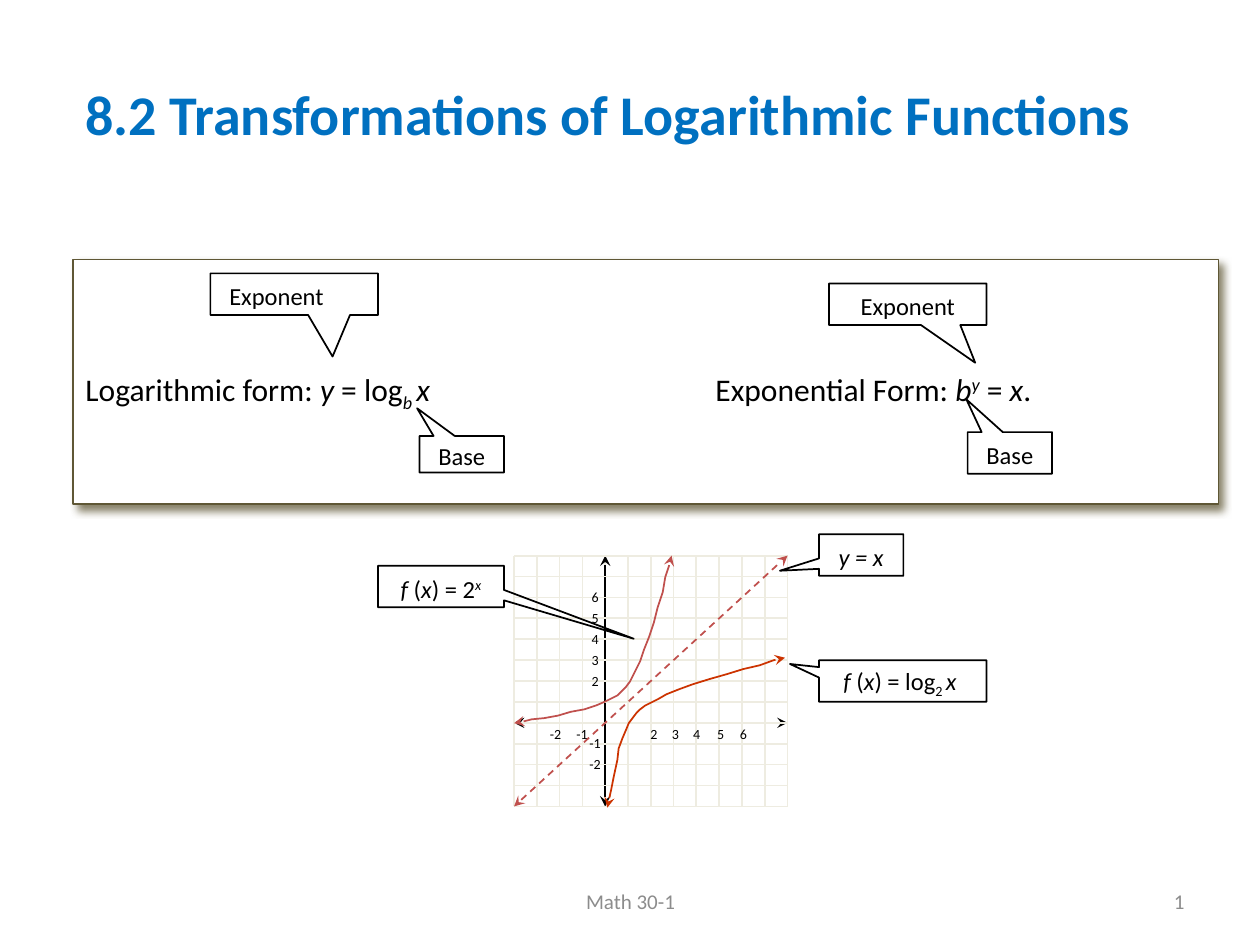
from lxml.etree import SubElement
from pptx import Presentation
from pptx.dml.color import RGBColor
from pptx.enum.dml import MSO_LINE_DASH_STYLE as Dash
from pptx.enum.shapes import MSO_CONNECTOR as Connector, MSO_SHAPE as Shape
from pptx.enum.text import MSO_ANCHOR as Anchor, PP_ALIGN as Align
from pptx.oxml.ns import qn
from pptx.util import Inches, Pt

BLACK = RGBColor(0x00, 0x00, 0x00)
WHITE = RGBColor(0xFF, 0xFF, 0xFF)
BLUE = RGBColor(0x00, 0x70, 0xC0)
GRAY = RGBColor(0x8C, 0x8C, 0x8C)
OLIVE = RGBColor(0x5F, 0x57, 0x35)
GRID = RGBColor(0xEE, 0xEC, 0xE1)
RED = RGBColor(0xC0, 0x50, 0x4D)
ORANGE = RGBColor(0xCC, 0x33, 0x00)

# Content: runs are (text, style), i = italic, _ = subscript, ^ = superscript
TITLE = [("8.2 Transformations of Logarithmic Functions", "b")]
FORMS = [("Logarithmic form: ", ""), ("y", "i"), (" = log", ""), ("b ", "i_"),
         ("x", "i"), ("\tExponential Form: ", ""), ("b", "i"), ("y", "i^"),
         (" = ", ""), ("x", "i"), (".", "")]
# (runs, left, top, width, height, pointer tip, right inset)
FORM_CALLOUTS = [
    ([("Exponent", "")], 1.67, 2.17, 1.33, 0.33, (2.64, 2.83), 0.28),
    ([("Exponent", "")], 6.58, 2.25, 1.25, 0.33, (7.74, 2.88), 0),
    ([("Base", "")], 3.33, 3.46, 0.67, 0.29, (3.31, 3.24), 0),
    ([("Base", "")], 7.68, 3.43, 0.67, 0.33, (7.67, 3.17), 0),
]
GRAPH_CALLOUTS = [
    ([("f", "i"), (" (", ""), ("x", "i"), (") = 2", ""), ("x", "i^")],
     3, 4.49, 1, 0.33, (5.03, 5.07), 0),
    ([("f", "i"), (" (", ""), ("x", "i"), (") = log", ""), ("2 ", "_"), ("x ", "i")],
     6.5, 5.24, 1.33, 0.33, (6.27, 5.27), 0),
    ([("y = x", "i")], 6.5, 4.24, 0.67, 0.33, (6.19, 4.53), 0),
]
X_LABELS = {-2: 4.41, -1: 4.62, 2: 5.19, 3: 5.36, 4: 5.53, 5: 5.72, 6: 5.9}
Y_LABELS = [6, 5, 4, 3, 2, -1, -2]
EXPONENTIAL = [
    (4.08, 5.74), (4.14, 5.73), (4.22, 5.71), (4.32, 5.7), (4.43, 5.68), (4.53, 5.65),
    (4.64, 5.63), (4.73, 5.6), (4.8, 5.57), (4.86, 5.54), (4.9, 5.52), (4.94, 5.48),
    (4.97, 5.45), (5, 5.41), (5.02, 5.37), (5.05, 5.31), (5.08, 5.25), (5.11, 5.16),
    (5.15, 5.06), (5.19, 4.94), (5.22, 4.82), (5.26, 4.7), (5.28, 4.58), (5.31, 4.49),
    (5.33, 4.41)]
LOGARITHM = [
    (4.82, 6.41), (4.83, 6.36), (4.85, 6.27), (4.87, 6.17), (4.9, 6.03), (4.91, 5.94),
    (4.94, 5.86), (4.97, 5.79), (4.99, 5.74), (5.02, 5.7), (5.05, 5.66), (5.08, 5.63),
    (5.12, 5.6), (5.16, 5.58), (5.22, 5.55), (5.29, 5.51), (5.39, 5.47), (5.5, 5.43),
    (5.63, 5.39), (5.77, 5.35), (5.9, 5.31), (6.03, 5.28), (6.14, 5.24), (6.23, 5.22)]

# Graph frame: 12 by 12 squares, origin 4 columns in and 8 rows down
LEFT, TOP, RIGHT, BOTTOM, CELLS = 4.08, 4.41, 6.25, 6.4, 12
COLUMN, ROW = (RIGHT - LEFT) / CELLS, (BOTTOM - TOP) / CELLS
ORIGIN_X, ORIGIN_Y = LEFT + 4 * COLUMN, TOP + 8 * ROW

prs = Presentation()
prs.slide_width, prs.slide_height = Inches(10), Inches(7.5)
slide = prs.slides.add_slide(prs.slide_layouts[6])
shapes = slide.shapes


def write(frame, runs, size=14, color=BLACK, align=Align.CENTER, anchor=Anchor.MIDDLE,
          insets=(0.1, 0.05, 0.1, 0.05), wrap=True, tab=None):
    frame.word_wrap, frame.vertical_anchor = wrap, anchor
    (frame.margin_left, frame.margin_top,
     frame.margin_right, frame.margin_bottom) = map(Inches, insets)
    paragraph = frame.paragraphs[0]
    paragraph.alignment = align
    if tab:
        stops = SubElement(paragraph._p.get_or_add_pPr(), qn("a:tabLst"))
        SubElement(stops, qn("a:tab"), pos=str(Inches(tab)), algn="l")
    for text, style in runs:
        run = paragraph.add_run()
        run.text = text
        font = run.font
        font.name, font.size, font.color.rgb = "Calibri", Pt(size), color
        font.bold, font.italic = "b" in style, "i" in style
        if "_" in style or "^" in style:
            run._r.get_or_add_rPr().set("baseline", "-25000" if "_" in style else "30000")


def add_text(box, runs, **fmt):
    write(shapes.add_textbox(*map(Inches, box)).text_frame, runs, **fmt)


def draw_line(shape, color, arrows=False):
    shape.line.color.rgb, shape.line.width = color, Pt(1)
    if arrows:
        outline = shape._element.spPr.find(qn("a:ln"))
        for end in ("a:headEnd", "a:tailEnd"):
            SubElement(outline, qn(end), type="stealth")


def add_line(x1, y1, x2, y2, color=GRID, arrows=False, dash=None):
    line = shapes.add_connector(Connector.STRAIGHT, *map(Inches, (x1, y1, x2, y2)))
    if dash:
        line.line.dash_style = dash
    draw_line(line, color, arrows)
    SubElement(line._element.spPr, qn("a:effectLst"))


def add_curve(points, color):
    start, *rest = [(Inches(x), Inches(y)) for x, y in points]
    builder = shapes.build_freeform(*start)
    builder.add_line_segments(rest, close=False)
    curve = builder.convert_to_shape()
    curve.fill.background()
    curve.shadow.inherit = False
    draw_line(curve, color, arrows=True)


def add_callout(runs, left, top, width, height, tip, right_inset):
    callout = shapes.add_shape(Shape.RECTANGULAR_CALLOUT,
                               *map(Inches, (left, top, width, height)))
    callout.adjustments[0] = (tip[0] - left) / width - 0.5
    callout.adjustments[1] = (tip[1] - top) / height - 0.5
    callout.fill.background()
    callout.shadow.inherit = False
    draw_line(callout, BLACK)
    write(callout.text_frame, runs, insets=(0, 0.03, right_inset, 0))


def add_axis_label(value, center_x, center_y):
    add_text((center_x - 0.16, center_y - 0.12, 0.32, 0.25), [(str(value), "")],
             size=8, anchor=Anchor.TOP)


# Panel with both forms
panel = shapes.add_shape(Shape.RECTANGLE, *map(Inches, (0.58, 2.06, 9.09, 1.94)))
panel.fill.solid()
panel.fill.fore_color.rgb = WHITE
draw_line(panel, OLIVE)
panel.shadow.inherit = False
shadow = SubElement(panel._element.spPr.find(qn("a:effectLst")), qn("a:outerShdw"),
                    blurRad=str(Pt(5)), dist=str(Pt(3.7)), dir=str(55 * 60000),
                    algn="ctr", rotWithShape="0")
shade = SubElement(shadow, qn("a:srgbClr"), val=str(OLIVE))
SubElement(shade, qn("a:alpha"), val="75000")
write(panel.text_frame, FORMS, size=18, align=Align.LEFT,
      insets=(0.1, 0.2, 0.1, 0.05), tab=5)
for callout in FORM_CALLOUTS:
    add_callout(*callout)

# Grid and axes
for i in range(CELLS + 1):
    add_line(LEFT + i * COLUMN, TOP, LEFT + i * COLUMN, BOTTOM)
add_line(ORIGIN_X, TOP, ORIGIN_X, BOTTOM, BLACK, arrows=True)
add_line(RIGHT, ORIGIN_Y, LEFT, ORIGIN_Y, BLACK, arrows=True)
for i in range(CELLS + 1):
    add_line(RIGHT, TOP + i * ROW, LEFT, TOP + i * ROW)

# Axis labels
for value, x in X_LABELS.items():
    add_axis_label(value, x, 5.83)
for value in Y_LABELS:
    add_axis_label(value, ORIGIN_X - 0.08, ORIGIN_Y - value * ROW)

# Line of reflection, curves and their callouts
add_line(LEFT, BOTTOM, RIGHT, TOP, RED, arrows=True, dash=Dash.DASH)
add_curve(EXPONENTIAL, RED)
add_curve(LOGARITHM, ORANGE)
for callout in GRAPH_CALLOUTS:
    add_callout(*callout)

# Title and footer
add_text((0.58, 0.58, 8.59, 0.64), TITLE, size=32, color=BLUE, align=Align.LEFT,
         anchor=Anchor.TOP, wrap=False)
add_text((3.42, 6.95, 3.17, 0.4), [("Math 30-1", "")], size=12, color=GRAY)
add_text((7.17, 6.95, 2.33, 0.4), [("1", "")], size=12, color=GRAY, align=Align.RIGHT)

prs.save("out.pptx")
